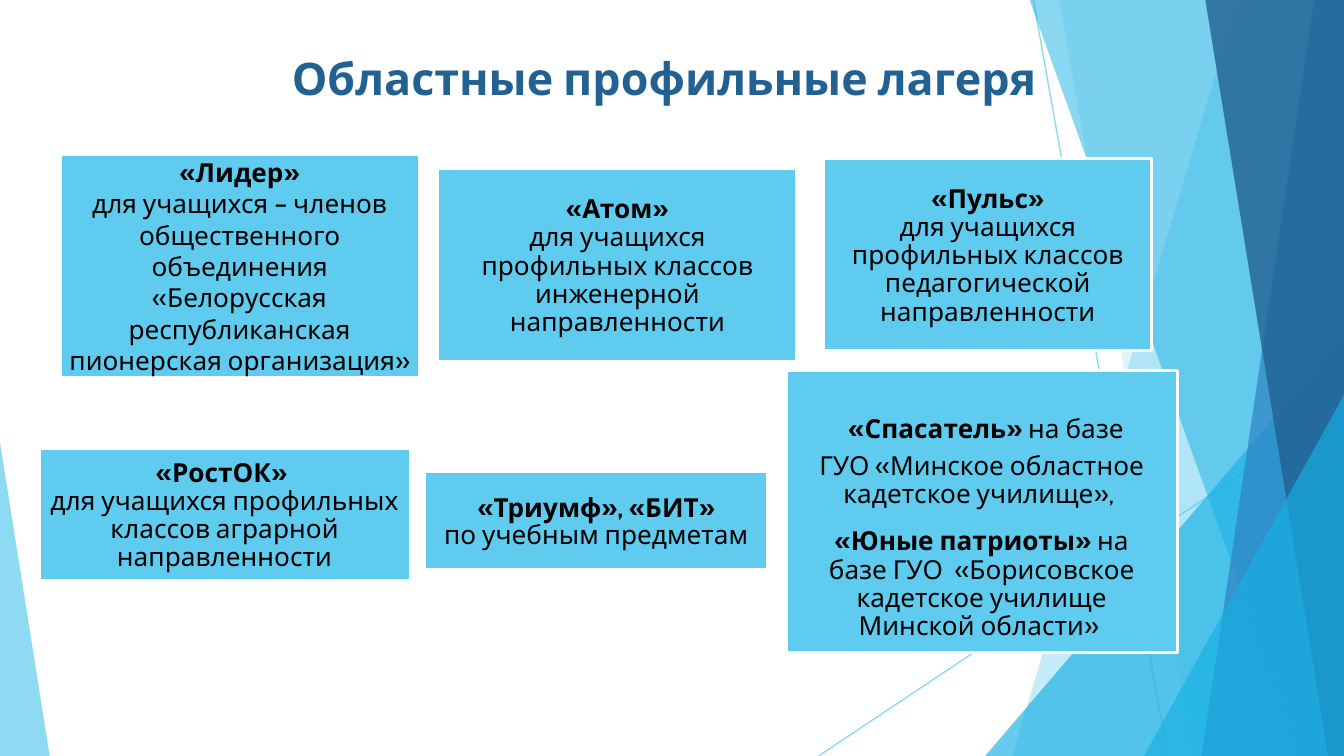
from dataclasses import dataclass

from lxml import etree
from pptx import Presentation
from pptx import util as u
from pptx.dml.color import RGBColor
from pptx.enum import shapes, text
from pptx.oxml.ns import qn

WIDE, HIGH = 25.4, 14.29
SKY, CYAN, BLUE, NAVY = "5FCBEF", "17B0E4", "2E83C3", "226292"
BLACK, WHITE = "000000", "FFFFFF"


@dataclass
class Run:
    words: str
    bold: bool = False
    size: int = 14


@dataclass
class Para:
    runs: list[Run]
    lead: float = 0.9
    after: float = 0


@dataclass
class Camp:
    left: float
    top: float
    width: float
    height: float
    paras: list[Para]
    pad: float = 0.15


@dataclass
class Band:
    """Strip along the right edge, given by the x of its left side."""
    upper: float
    lower: float
    color: str
    alpha: int


@dataclass
class Wedge:
    """Triangle standing on the bottom edge."""
    left: float
    top: float
    width: float
    tip: float
    color: str
    alpha: int


def paint(target, color: str, alpha: int = 100) -> None:
    """Give a fill a solid colour with opacity in percent."""
    target.solid()
    target.fore_color.rgb = RGBColor.from_string(color)
    if alpha < 100:
        node = target.fore_color._xFill.find(qn("a:srgbClr"))
        etree.SubElement(node, qn("a:alpha")).set("val", str(alpha * 1000))


def finish(shape, color: str, alpha: int) -> None:
    """Fill a shape and drop its outline and shadow."""
    paint(shape.fill, color, alpha)
    shape.line.fill.background()
    shape.shadow.inherit = False


def draw_line(slide, *ends: float) -> None:
    line = slide.shapes.add_connector(
        shapes.MSO_CONNECTOR.STRAIGHT, *map(u.Cm, ends))
    line.line.width = u.Pt(0.75)
    paint(line.line.fill, SKY, 70)
    etree.SubElement(line._element.spPr, qn("a:effectLst"))


def draw_band(slide, band: Band) -> None:
    pen = slide.shapes.build_freeform(u.Cm(band.upper), 0)
    points = [(WIDE, 0), (WIDE, HIGH), (band.lower, HIGH)]
    pen.add_line_segments([(u.Cm(x), u.Cm(y)) for x, y in points])
    finish(pen.convert_to_shape(), band.color, band.alpha)


def draw_wedge(slide, wedge: Wedge) -> None:
    place = (wedge.left, wedge.top, wedge.width, HIGH - wedge.top)
    shape = slide.shapes.add_shape(
        shapes.MSO_SHAPE.ISOSCELES_TRIANGLE, *map(u.Cm, place))
    shape.adjustments[0] = wedge.tip
    finish(shape, wedge.color, wedge.alpha)


def write(frame, paras: list[Para], color: str, form: dict) -> None:
    for key, value in form.items():
        setattr(frame, key, value)
    for i, para in enumerate(paras):
        line = frame.paragraphs[0] if i == 0 else frame.add_paragraph()
        look = {"alignment": text.PP_ALIGN.CENTER,
                "line_spacing": para.lead, "space_after": u.Pt(para.after)}
        for key, value in look.items():
            setattr(line, key, value)
        for run in para.runs:
            for j, part in enumerate(run.words.split("\n")):
                if j:
                    line.add_line_break()
                piece = line.add_run()
                piece.text = part
                font = {"name": "Cabin", "size": u.Pt(run.size),
                        "bold": run.bold}
                for key, value in font.items():
                    setattr(piece.font, key, value)
                paint(piece.font.fill, color)


def draw_camp(slide, camp: Camp) -> None:
    place = (camp.left, camp.top, camp.width, camp.height)
    box = slide.shapes.add_shape(
        shapes.MSO_SHAPE.RECTANGLE, *map(u.Cm, place))
    finish(box, SKY, 100)
    paint(box.line.fill, WHITE)
    box.line.width = u.Pt(1.5)
    sides = ("left", "top", "right", "bottom")
    form = {f"margin_{side}": u.Cm(camp.pad) for side in sides}
    form |= {"word_wrap": True, "vertical_anchor": text.MSO_ANCHOR.MIDDLE}
    write(box.text_frame, camp.paras, BLACK, form)


def entry(name: str, about: str, lead: float = 0.9) -> list[Para]:
    """Bold camp name above a plain description."""
    return [Para([Run(name, True)], 1.0), Para([Run(about)], lead)]


LINES = [(19.53, 0, 22.07, HIGH), (WIDE, 7.67, 15.47, HIGH)]
DECOR = [
    Band(23.39, 19.13, SKY, 36),
    Band(20.02, 22.53, SKY, 20),
    Wedge(18.62, 6.35, 6.78, 1, CYAN, 66),
    Band(19.46, 24.59, CYAN, 50),
    Band(24.84, 22.71, BLUE, 70),
    Band(22.78, 25.1, NAVY, 80),
    Wedge(21.62, 7.47, 3.78, 1, CYAN, 66),
    Wedge(0, 8.36, 0.94, 0, SKY, 70),
]
CADETS = [
    Para([Run(" ", True, 35), Run("«Спасатель» ", True),
          Run("на базе \nГУО «Минское областное кадетское училище», ")],
         after=10),
    Para([Run("«Юные патриоты» ", True),
          Run("на базе ГУО  «Борисовское кадетское училище "
              "Минской области» ")]),
]
CAMPS = [
    Camp(1.14, 2.92, 6.78, 4.22, entry(
        "«Лидер»", "для учащихся – членов общественного объединения "
        "«Белорусская республиканская пионерская организация»", 1.0)),
    Camp(8.28, 3.18, 6.78, 3.66, entry(
        "«Атом»", "для учащихся профильных классов "
        "инженерной направленности")),
    Camp(15.57, 3, 6.2, 3.63, entry(
        "«Пульс»", "для учащихся профильных классов "
        "педагогической направленности")),
    Camp(0.74, 8.48, 7.01, 2.49, entry(
        "«РостОК» ", "для учащихся профильных классов "
        "аграрной направленности")),
    Camp(8.03, 8.92, 6.48, 1.85, entry(
        "«Триумф», «БИТ»", "по учебным предметам")),
    Camp(14.86, 7.01, 7.39, 5.33, CADETS, 0.38),
]


def main() -> None:
    deck = Presentation()
    deck.slide_width, deck.slide_height = u.Cm(WIDE), u.Cm(HIGH)
    slide = deck.slides.add_slide(deck.slide_layouts[6])
    for ends in LINES:
        draw_line(slide, *ends)
    for item in DECOR:
        draw = draw_band if isinstance(item, Band) else draw_wedge
        draw(slide, item)
    title = slide.shapes.add_textbox(*map(u.Cm, (1.78, 0.84, 21.74, 2.74)))
    head = Para([Run("Областные профильные лагеря ", True, 24)], 1.0)
    write(title.text_frame, [head], NAVY, {"word_wrap": True})
    for camp in CAMPS:
        draw_camp(slide, camp)
    deck.save("out.pptx")


if __name__ == "__main__":
    main()
